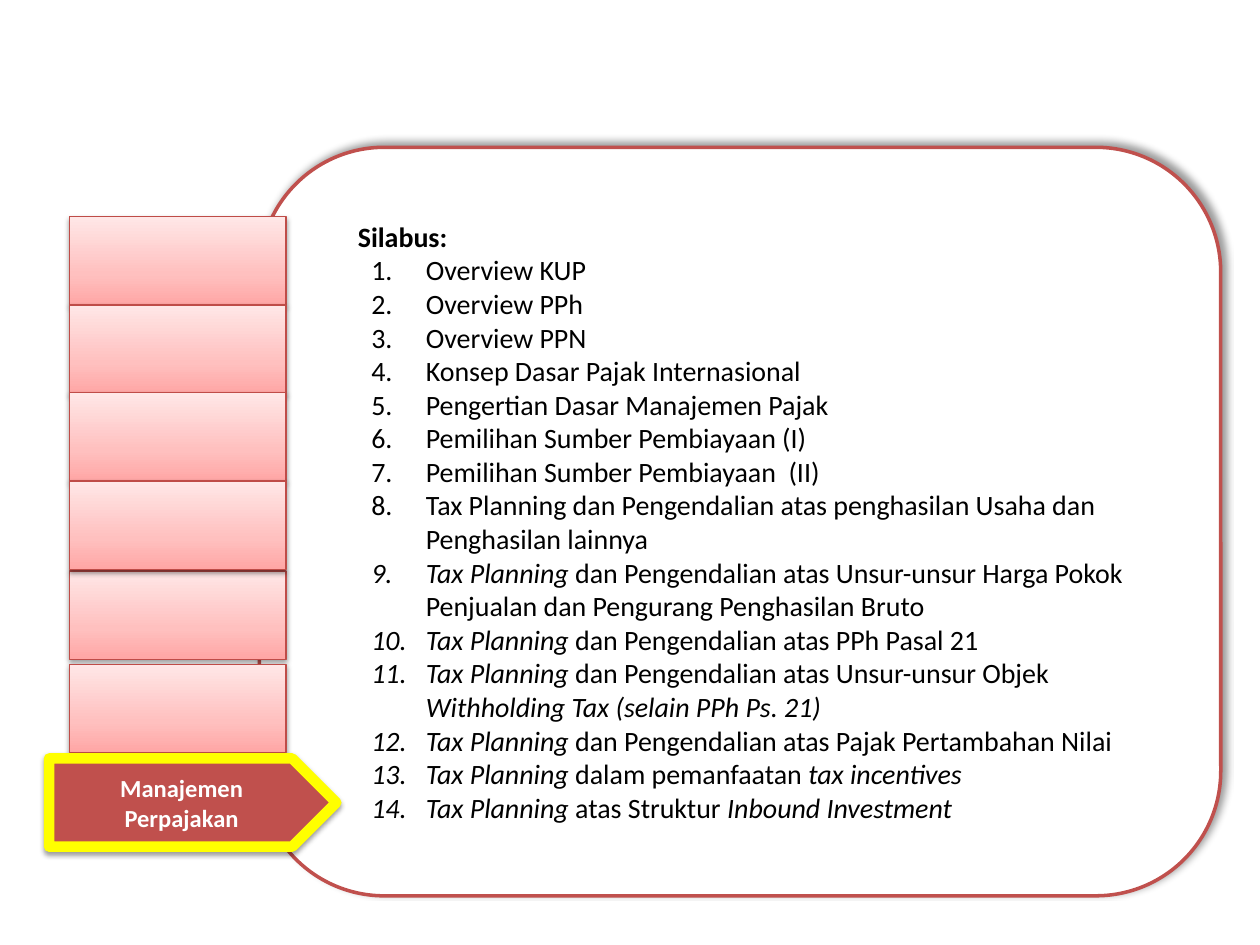
from lxml.etree import SubElement
from pptx import Presentation
from pptx.dml.color import RGBColor
from pptx.enum.shapes import MSO_SHAPE
from pptx.enum.text import MSO_ANCHOR, PP_ALIGN
from pptx.oxml.ns import qn
from pptx.util import Cm, Pt

WHITE = RGBColor(0xFF, 0xFF, 0xFF)
BLACK = RGBColor(0, 0, 0)
RED = RGBColor(0xC0, 0x50, 0x4D)
EDGE = RGBColor(0xBF, 0x4C, 0x48)
YELLOW = RGBColor(0xFF, 0xFF, 0)
STOPS = ((0, RGBColor(0xFF, 0xA6, 0xA5)),
         (35, RGBColor(0xFF, 0xC0, 0xBF)),
         (100, RGBColor(0xFF, 0xE7, 0xE7)))

# Each topic is a list of (text, italic) runs.
TAX = ("Tax Planning ", True)
PLAIN = ["Overview KUP", "Overview PPh", "Overview PPN",
         "Konsep Dasar Pajak Internasional",
         "Pengertian Dasar Manajemen Pajak",
         "Pemilihan Sumber Pembiayaan (I)",
         "Pemilihan Sumber Pembiayaan  (II)",
         "Tax Planning dan Pengendalian atas penghasilan Usaha dan "
         "Penghasilan lainnya"]
TOPICS = [[(text, False)] for text in PLAIN] + [
    [TAX, ("dan Pengendalian atas Unsur-unsur Harga Pokok Penjualan dan "
           "Pengurang Penghasilan Bruto", False)],
    [TAX, ("dan Pengendalian atas PPh Pasal 21", False)],
    [TAX, ("dan Pengendalian atas Unsur-unsur Objek ", False),
     ("Withholding Tax (selain PPh Ps. 21)", True)],
    [TAX, ("dan Pengendalian atas Pajak Pertambahan Nilai", False)],
    [TAX, ("dalam pemanfaatan ", False), ("tax incentives", True)],
    [TAX, ("atas Struktur ", False), ("Inbound Investment", True)],
]
TABS = (0, 7.14, 1.78, 3.55, 5.33, 9.02)  # tops, from back to front


def add_shadow(shape, alpha, blur, dist, angle):
    shape.shadow.inherit = False
    effects = shape._element.spPr.find(qn("a:effectLst"))
    outer = SubElement(effects, qn("a:outerShdw"), blurRad=str(Pt(blur)),
                       dist=str(Pt(dist)), dir=str(angle * 60000),
                       algn="ctr", rotWithShape="0")
    color = SubElement(outer, qn("a:srgbClr"), val=str(BLACK))
    SubElement(color, qn("a:alpha"), val=str(alpha * 1000))


def add_block(slide, kind, box, edge, width, shadow=(38, 3.1, 1.6, 90)):
    shape = slide.shapes.add_shape(kind, *map(Cm, box))
    shape.line.color.rgb = edge
    shape.line.width = Pt(width)
    add_shadow(shape, *shadow)
    return shape


def fill_solid(shape, color):
    shape.fill.solid()
    shape.fill.fore_color.rgb = color


def fill_fade(shape):
    """Fade from the first stop at the bottom to the last at the top."""
    shape.fill.gradient()
    shape.fill.gradient_angle = 90
    stops = shape._element.spPr.find(qn("a:gradFill")).find(qn("a:gsLst"))
    for old in list(stops):
        stops.remove(old)
    for place, color in STOPS:
        stop = SubElement(stops, qn("a:gs"), pos=str(place * 1000))
        SubElement(stop, qn("a:srgbClr"), val=str(color))


def add_run(para, text, size, color, bold=False, italic=False):
    run = para.add_run()
    run.text = text
    font = run.font
    font.name, font.size = "Calibri", Pt(size)
    font.bold, font.italic = bold, italic
    font.color.rgb = color


def indent(para, left, first):
    props = para._p.get_or_add_pPr()
    props.set("marL", str(Cm(left)))
    props.set("indent", str(Cm(first)))
    return props


def add_panel(slide, box):
    panel = add_block(slide, MSO_SHAPE.ROUNDED_RECTANGLE, box, RED, 2,
                      (40, 4, 3, 315))
    fill_solid(panel, WHITE)
    frame = panel.text_frame
    frame.word_wrap = True
    frame.vertical_anchor = MSO_ANCHOR.MIDDLE
    head = frame.paragraphs[0]
    head.alignment = PP_ALIGN.LEFT
    indent(head, 0, 1.0)
    add_run(head, "Silabus:", 16, BLACK, bold=True)
    for topic in TOPICS:
        para = frame.add_paragraph()
        para.alignment = PP_ALIGN.LEFT
        props = indent(para, 2.37, -1.1)
        SubElement(props, qn("a:buFont"), typeface="+mj-lt")
        SubElement(props, qn("a:buAutoNum"), type="arabicPeriod")
        for text, italic in topic:
            add_run(para, text, 16, BLACK, italic=italic)


def add_tabs(slide, left, top, width, height):
    for drop in TABS:
        box = (left, top + drop, width, height)
        fill_fade(add_block(slide, MSO_SHAPE.RECTANGLE, box, EDGE, 0.75))


def add_arrow(slide, box):
    arrow = add_block(slide, MSO_SHAPE.PENTAGON, box, YELLOW, 6)
    fill_solid(arrow, RED)
    frame = arrow.text_frame
    frame.word_wrap = True
    frame.vertical_anchor = MSO_ANCHOR.MIDDLE
    para = frame.paragraphs[0]
    para.alignment = PP_ALIGN.CENTER
    add_run(para, "Manajemen Perpajakan", 14, WHITE, bold=True)


def main():
    deck = Presentation()
    deck.slide_width, deck.slide_height = Cm(25.4), Cm(19.05)
    slide = deck.slides.add_slide(deck.slide_layouts[6])
    add_panel(slide, (5.23, 2.97, 19.38, 15.09))
    add_tabs(slide, 1.4, 4.37, 4.37, 1.78)
    add_arrow(slide, (0.99, 15.29, 5.79, 1.78))
    deck.save("out.pptx")


if __name__ == "__main__":
    main()
